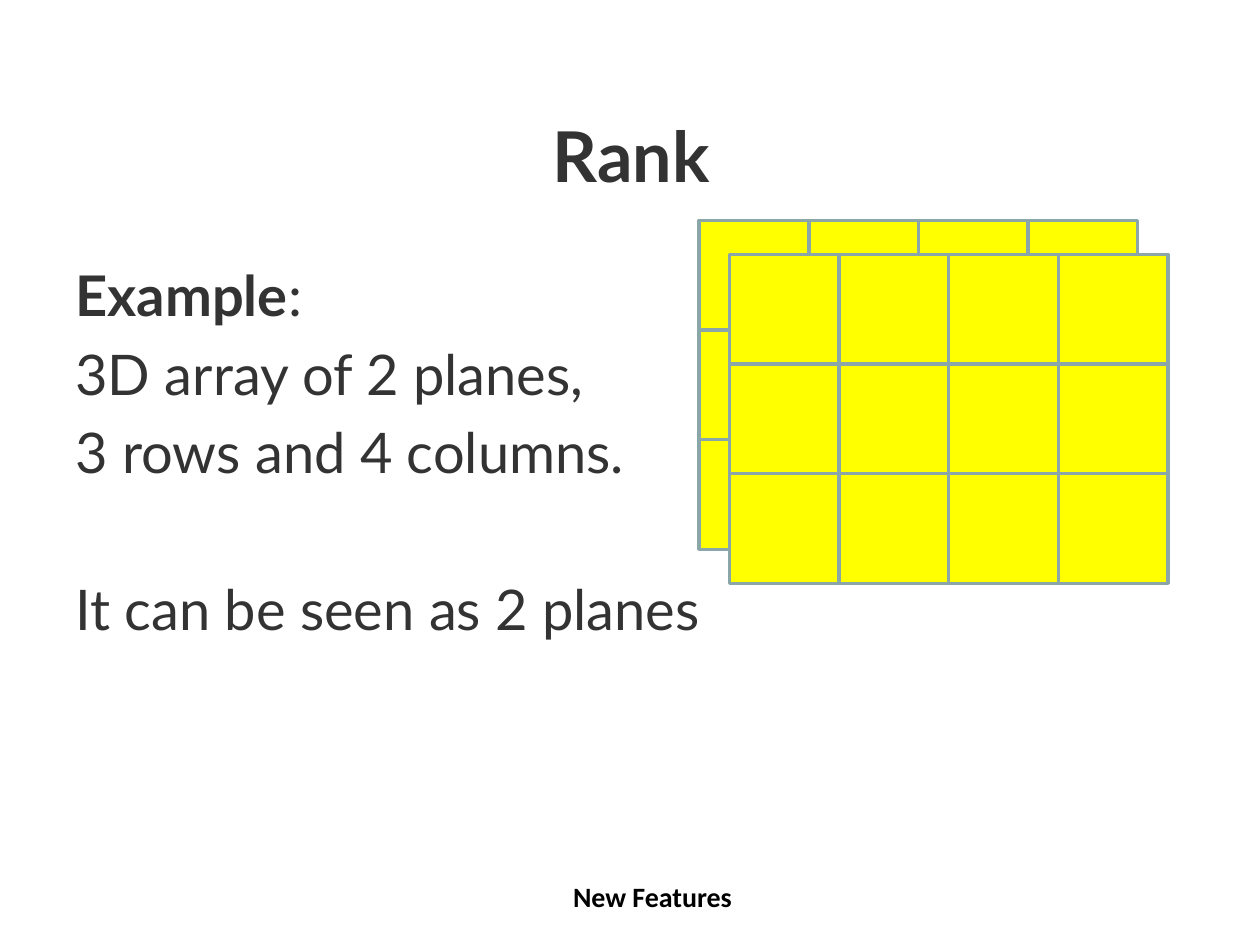
from pptx import Presentation
from pptx.dml.color import RGBColor
from pptx.enum.shapes import MSO_SHAPE
from pptx.enum.text import MSO_ANCHOR, PP_ALIGN
from pptx.util import Inches, Pt

RECTANGLE = MSO_SHAPE.RECTANGLE
TOP = MSO_ANCHOR.TOP
CENTER = PP_ALIGN.CENTER

TEXT_COLOR = "333333"
CELL_FILL = "FFFF00"
CELL_LINE = "8AA6A8"


def color(hex_string):
    return RGBColor.from_string(hex_string)


def style(span, font_name, size, hex_string, bold):
    span.font.name = font_name
    span.font.size = Pt(size)
    span.font.bold = bold
    span.font.color.rgb = color(hex_string)


deck = Presentation()
deck.slide_width, deck.slide_height = Inches(10), Inches(7.5)
page = deck.slides.add_slide(deck.slide_layouts[5])

# Title
title = page.shapes.title
title.left, title.top = Inches(0.51), Inches(0.84)
title.width, title.height = Inches(9), Inches(0.87)
title.text_frame.text = "Rank"
title.text_frame.vertical_anchor = TOP
title_para = title.text_frame.paragraphs[0]
title_para.alignment = CENTER
style(title_para.runs[0], "Lato", 40, TEXT_COLOR, True)

# Example text
body = page.shapes.add_textbox(Inches(0.5), Inches(2.02), Inches(9), Inches(4.68))
body.text_frame.word_wrap = True
body.text_frame.text = "Example\n3D array of 2 planes,\n3 rows and 4 columns.\nIt can be seen as 2 planes"
paragraphs = body.text_frame.paragraphs
paragraphs[0].add_run().text = ":"
for para in paragraphs:
    for span in para.runs:
        style(span, "Lato", 32, TEXT_COLOR, span.text == "Example")
for para, gap in zip(paragraphs[1:], (6.4, 6.4, 51.2)):
    para.space_before = Pt(gap)

# Footer
footer = page.shapes.add_textbox(Inches(4.45), Inches(6.93), Inches(1.5), Inches(0.4))
footer.text_frame.text = "New Features"
style(footer.text_frame.paragraphs[0].runs[0], "Calibri", 16, "000000", True)

# Two planes of 3 rows and 4 columns, the rear one first
ROWS, COLUMNS = 3, 4
CELL = Inches(0.87)
for left, top in ((5.55, 1.75), (5.79, 2.02)):
    plane = page.shapes.add_group_shape()
    for row in range(ROWS):
        for column in range(COLUMNS):
            cell = plane.shapes.add_shape(
                RECTANGLE, Inches(left) + column * CELL, Inches(top) + row * CELL, CELL, CELL)
            cell.shadow.inherit = False
            cell.fill.solid()
            cell.fill.fore_color.rgb = color(CELL_FILL)
            cell.line.color.rgb = color(CELL_LINE)
            cell.line.width = Pt(2)

deck.save("out.pptx")
